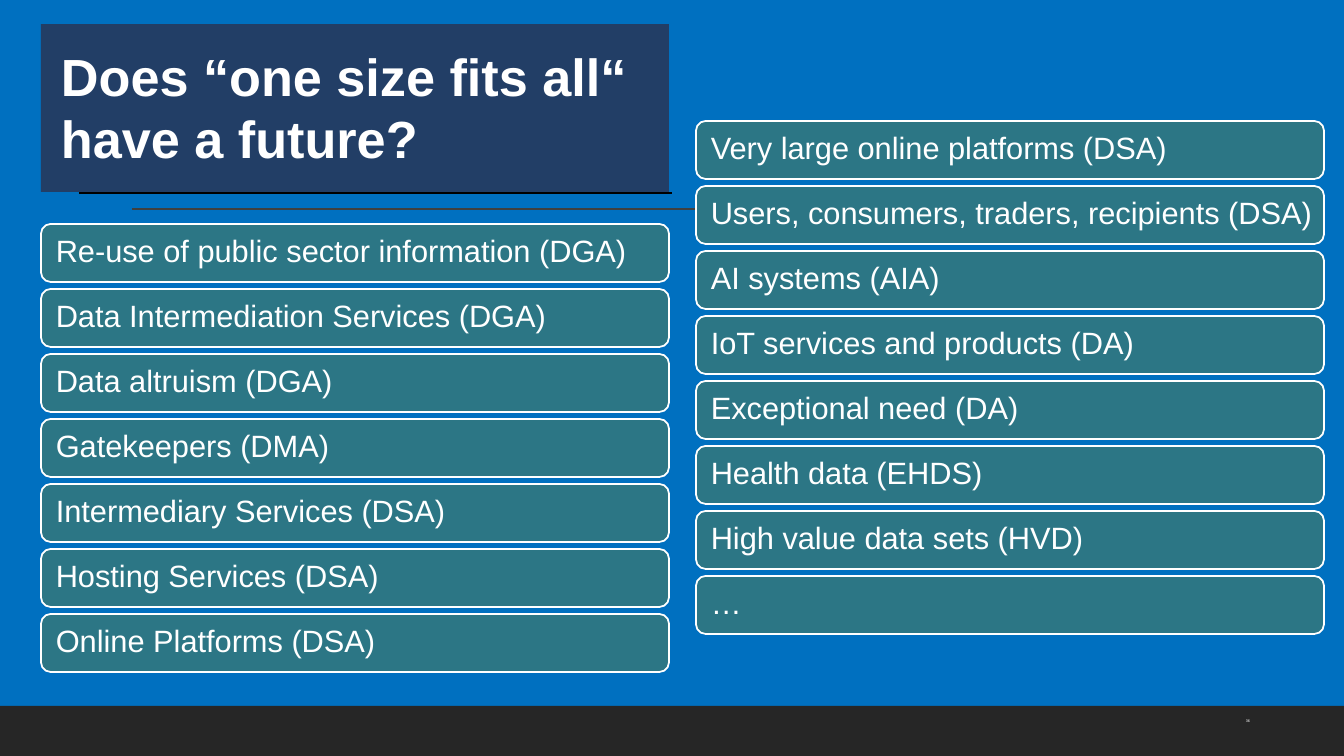
from dataclasses import dataclass

from pptx import Presentation
from pptx import util as u
from pptx.dml.color import RGBColor
from pptx.enum import shapes, text
from pptx.oxml.ns import qn
from lxml import etree

EMU_PER_PX = 914400 / 100.8


@dataclass(frozen=True)
class Theme:
    font: str = "Arial"
    background: str = "0070C0"
    footer: str = "262626"
    title_fill: str = "223E66"
    card_fill: str = "2C7685"
    white: str = "FFFFFF"
    long_rule: str = "404040"
    short_rule: str = "000000"
    title_size: float = 37.3
    card_size: float = 22
    number_size: float = 2.7


THEME = Theme()
PAGE_WIDTH, PAGE_HEIGHT = 1344, 756
CARD_WIDTH, CARD_HEIGHT, CARD_PITCH = 628, 58, 65

LEFT_CARDS = [
    "Re-use of public sector information (DGA)",
    "Data Intermediation Services (DGA)",
    "Data altruism (DGA)",
    "Gatekeepers (DMA)",
    "Intermediary Services (DSA)",
    "Hosting Services (DSA)",
    "Online Platforms (DSA)",
]
RIGHT_CARDS = [
    "Very large online platforms (DSA)",
    "Users, consumers, traders, recipients (DSA)",
    "AI systems (AIA)",
    "IoT services and products (DA)",
    "Exceptional need (DA)",
    "Health data (EHDS)",
    "High value data sets (HVD)",
    "…",
]


def px(length):
    return u.Emu(round(length * EMU_PER_PX))


def color(value):
    return RGBColor.from_string(value)


def paint(target, value):
    target.fill.solid()
    target.fill.fore_color.rgb = color(value)


def write(box, words, *, size, bold=False, anchor=text.MSO_ANCHOR.MIDDLE,
          insets=(10, 5, 10, 5), spacing=0.9):
    frame = box.text_frame
    frame.word_wrap = True
    frame.auto_size = text.MSO_AUTO_SIZE.NONE
    frame.vertical_anchor = anchor
    (frame.margin_left, frame.margin_top,
     frame.margin_right, frame.margin_bottom) = map(px, insets)
    para = frame.paragraphs[0]
    para.alignment = text.PP_ALIGN.LEFT
    para.line_spacing = spacing
    span = para.add_run()
    span.text = words
    span.font.name = THEME.font
    span.font.size = u.Pt(size)
    span.font.bold = bold
    span.font.color.rgb = color(THEME.white)


def add_panel(page, kind, left, top, width, height, fill, outline=None):
    panel = page.shapes.add_shape(kind, *map(px, (left, top, width, height)))
    panel.shadow.inherit = False
    paint(panel, fill)
    if outline:
        panel.line.color.rgb = color(outline)
        panel.line.width = u.Pt(1.25)
    else:
        panel.line.fill.background()
    return panel


def add_rule(page, left, right, top, value):
    rule = page.shapes.add_connector(
        shapes.MSO_CONNECTOR.STRAIGHT, *map(px, (left, top, right, top)))
    rule.line.color.rgb = color(value)
    rule.line.width = u.Pt(1)
    etree.SubElement(rule._element.spPr, qn("a:effectLst"))


def add_title(page, words):
    title = page.shapes.title
    title.left, title.top, title.width, title.height = map(px, (41, 24, 628, 168))
    paint(title, THEME.title_fill)
    write(title, words, size=THEME.title_size, bold=True,
          anchor=text.MSO_ANCHOR.TOP, insets=(20, 20, 20, 20), spacing=1.0)


def add_cards(page, left, top, labels):
    for row, label in enumerate(labels):
        card = add_panel(page, shapes.MSO_SHAPE.ROUNDED_RECTANGLE,
                         left, top + row * CARD_PITCH, CARD_WIDTH, CARD_HEIGHT,
                         THEME.card_fill, THEME.white)
        write(card, label, size=THEME.card_size, insets=(12, 9, 9, 9))


def add_page_number(page, words):
    box = page.shapes.add_textbox(*map(px, (1236, 713, 63, 17)))
    write(box, words, size=THEME.number_size)


def main():
    deck = Presentation()
    deck.slide_width, deck.slide_height = px(PAGE_WIDTH), px(PAGE_HEIGHT)
    page = deck.slides.add_slide(deck.slide_layouts[5])
    paint(page.background, THEME.background)
    add_title(page, "Does “one size fits all“ have a future?")
    add_panel(page, shapes.MSO_SHAPE.RECTANGLE, 0, 706, PAGE_WIDTH, 50, THEME.footer)
    add_rule(page, 132, 1231, 209, THEME.long_rule)
    add_rule(page, 79, 672, 193, THEME.short_rule)
    add_page_number(page, "36")
    add_cards(page, 41, 224, LEFT_CARDS)
    add_cards(page, 696, 121, RIGHT_CARDS)
    deck.save("out.pptx")


if __name__ == "__main__":
    main()
